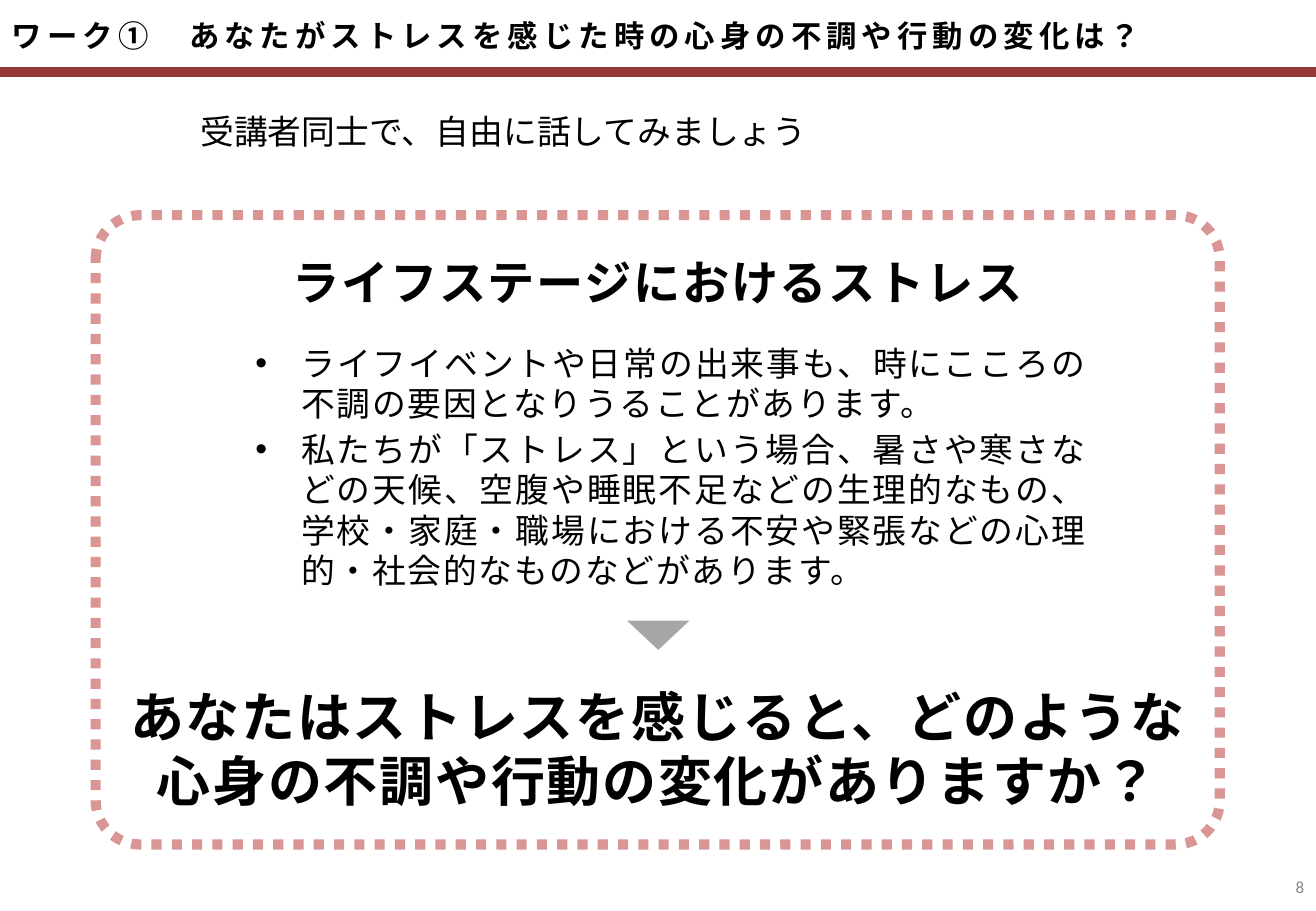
from dataclasses import dataclass

from pptx import Presentation
from pptx.dml.color import RGBColor
from pptx.enum.dml import MSO_LINE_DASH_STYLE as Dash
from pptx.enum.shapes import MSO_CONNECTOR as Wire, MSO_SHAPE as Kind
from pptx.enum.text import MSO_ANCHOR as Anchor, PP_ALIGN as Align
from pptx.oxml.ns import qn
from pptx.slide import Slide
from pptx.text.text import _Paragraph as Para
from pptx.util import Cm, Pt
from lxml.etree import SubElement

BLACK = RGBColor(0x00, 0x00, 0x00)
GRAY = RGBColor(0x89, 0x89, 0x89)
ARROW = RGBColor(0xA6, 0xA6, 0xA6)
RED = RGBColor(0x95, 0x37, 0x35)
PINK = RGBColor(0xD9, 0x96, 0x94)
GOTHIC = "Noto Sans CJK JP"
WIDTH, HEIGHT = 27.51, 19.05
BAR = 1.5


@dataclass(frozen=True)
class Label:
    """A text box: place in cm, sizes and spacing in points."""
    text: str
    left: float
    top: float
    width: float
    height: float
    size: int
    bold: bool = False
    track: int = 0
    pitch: float = 0
    align: Align = Align.LEFT
    anchor: Anchor = Anchor.MIDDLE
    color: RGBColor = BLACK
    font: str = GOTHIC
    bullet: bool = False


LABELS = [
    Label("受講者同士で、自由に話してみましょう", 3.94, 1.8, 23.04, 1.9, 20),
    Label("8", 26.47, 18.03, 1.04, 1.02, 10, align=Align.RIGHT,
          color=GRAY, font="Calibri"),
    Label("ワーク①　あなたがストレスを感じた時の心身の不調や行動の変化は？",
          0, 0, WIDTH, BAR, 18, bold=True, track=3),
    Label("ライフステージにおけるストレス", 2, 5.1, 23.5, 1.6, 28,
          bold=True, track=1, pitch=33.6, align=Align.CENTER),
    Label("ライフイベントや日常の出来事も、時にこころの不調の要因となりうることがあります。\n"
          "私たちが「ストレス」という場合、暑さや寒さなどの天候、空腹や睡眠不足などの生理的なもの、"
          "学校・家庭・職場における不安や緊張などの心理的・社会的なものなどがあります。",
          4.55, 7.04, 18.42, 5.49, 20, track=1, pitch=24,
          align=Align.JUSTIFY, anchor=Anchor.TOP, bullet=True),
    Label("あなたはストレスを感じると、どのような\n心身の不調や行動の変化がありますか？",
          2, 14.15, 23.5, 3, 32, bold=True, track=1, pitch=38,
          align=Align.CENTER),
]


def add_bullet(para: Para) -> None:
    props = para._p.get_or_add_pPr()
    props.set("marL", str(Cm(1.5)))
    props.set("indent", str(Cm(-0.96)))
    SubElement(props, qn("a:buFont"), typeface="Arial")
    SubElement(props, qn("a:buChar"), char="•")


def style(para: Para, label: Label) -> None:
    para.alignment = label.align
    if label.pitch:
        para.line_spacing = Pt(label.pitch)
    for run in para.runs:
        font = run.font
        font.size, font.bold, font.name = Pt(label.size), label.bold, label.font
        font.color.rgb = label.color
        props = run._r.get_or_add_rPr()
        props.set("lang", "ja-JP")
        props.set("spc", str(label.track * 100))
        SubElement(props, qn("a:ea"), typeface=label.font)


def add_label(slide: Slide, label: Label) -> None:
    box = slide.shapes.add_textbox(Cm(label.left), Cm(label.top),
                                   Cm(label.width), Cm(label.height))
    frame = box.text_frame
    frame.word_wrap = True
    frame.vertical_anchor = label.anchor
    frame.text = label.text
    for i, para in enumerate(frame.paragraphs):
        if label.bullet:
            para.space_before = Pt(3 if i else 0)
        style(para, label)
        if label.bullet:
            add_bullet(para)


def add_bar(slide: Slide) -> None:
    bar = slide.shapes.add_connector(Wire.STRAIGHT, 0, Cm(BAR), Cm(WIDTH), Cm(BAR))
    bar.line.color.rgb = RED
    bar.line.width = Pt(6)
    SubElement(bar._element.spPr, qn("a:effectLst"))


def add_frame(slide: Slide) -> None:
    frame = slide.shapes.add_shape(Kind.ROUNDED_RECTANGLE,
                                   Cm(2), Cm(4.5), Cm(23.5), Cm(13.16))
    frame.adjustments[0] = 0.07
    frame.shadow.inherit = False
    frame.fill.background()
    frame.line.color.rgb = PINK
    frame.line.width = Pt(6)
    frame.line.dash_style = Dash.ROUND_DOT


def add_arrow(slide: Slide) -> None:
    arrow = slide.shapes.add_shape(Kind.ISOSCELES_TRIANGLE,
                                   Cm(13.11), Cm(12.98), Cm(1.3), Cm(0.61))
    arrow.rotation = 180
    arrow.shadow.inherit = False
    arrow.fill.solid()
    arrow.fill.fore_color.rgb = ARROW
    arrow.line.fill.background()


def main() -> None:
    deck = Presentation()
    deck.slide_width, deck.slide_height = Cm(WIDTH), Cm(HEIGHT)
    slide = deck.slides.add_slide(deck.slide_layouts[6])
    add_bar(slide)
    add_frame(slide)
    for label in LABELS:
        add_label(slide, label)
    add_arrow(slide)
    deck.save("out.pptx")


if __name__ == "__main__":
    main()
